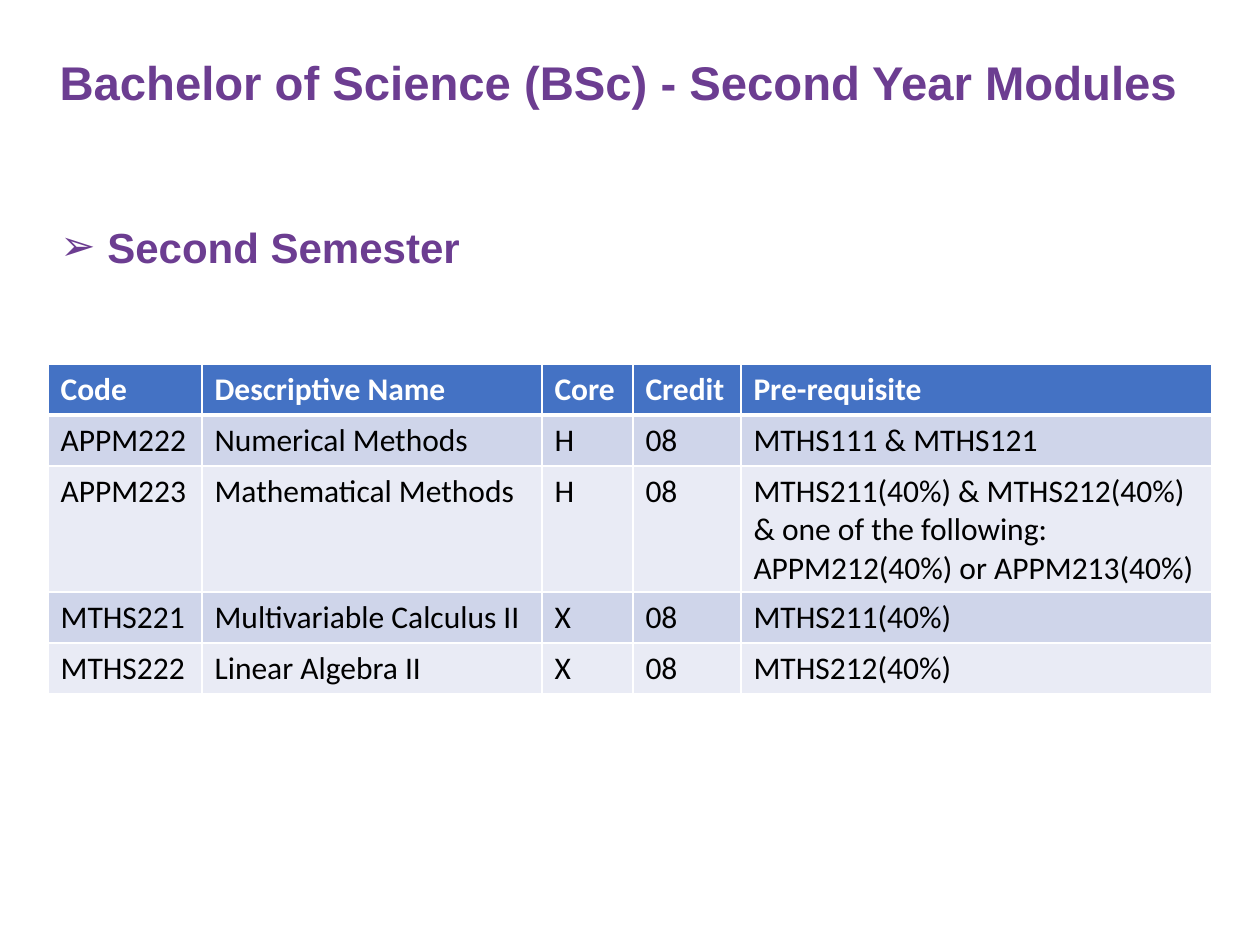
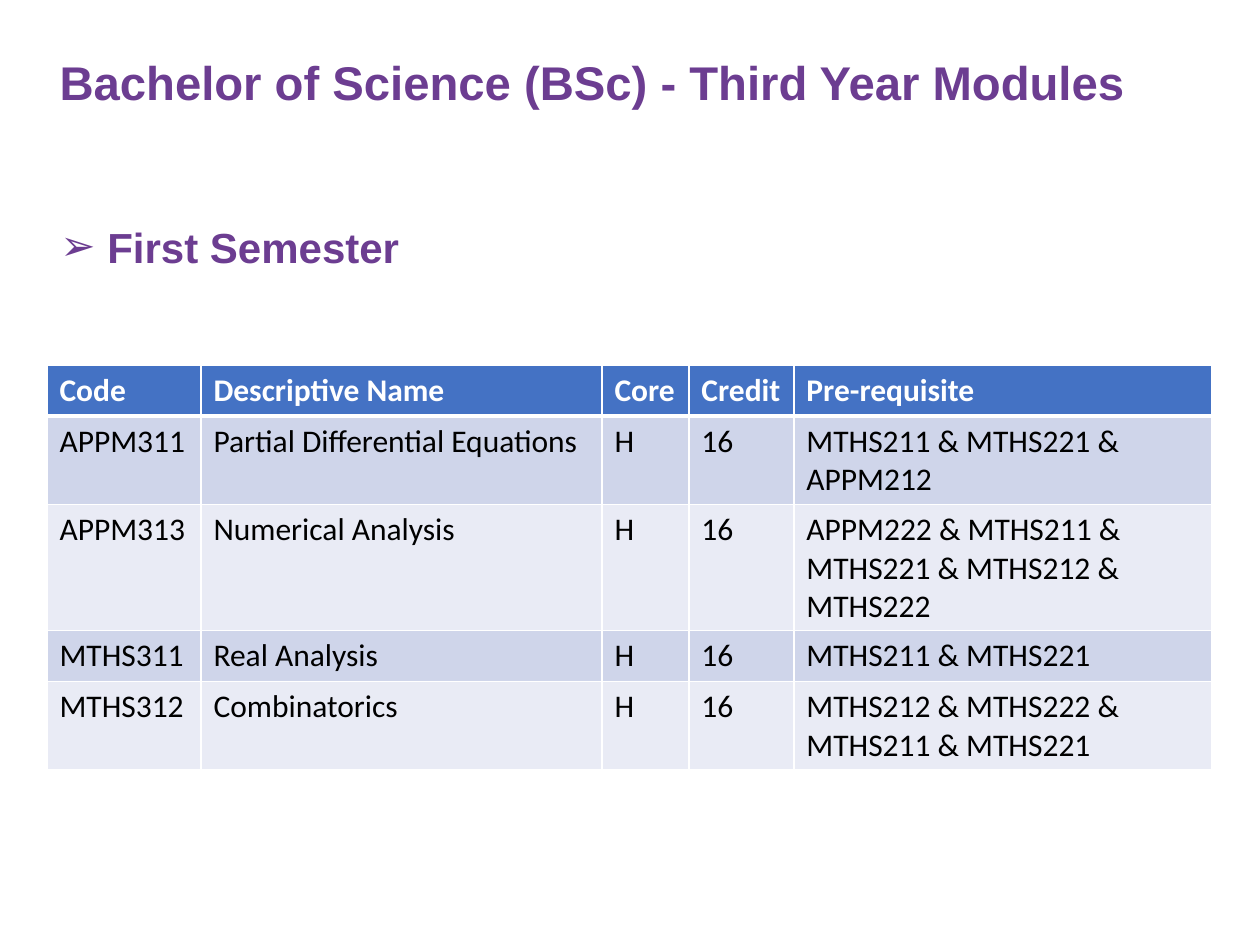
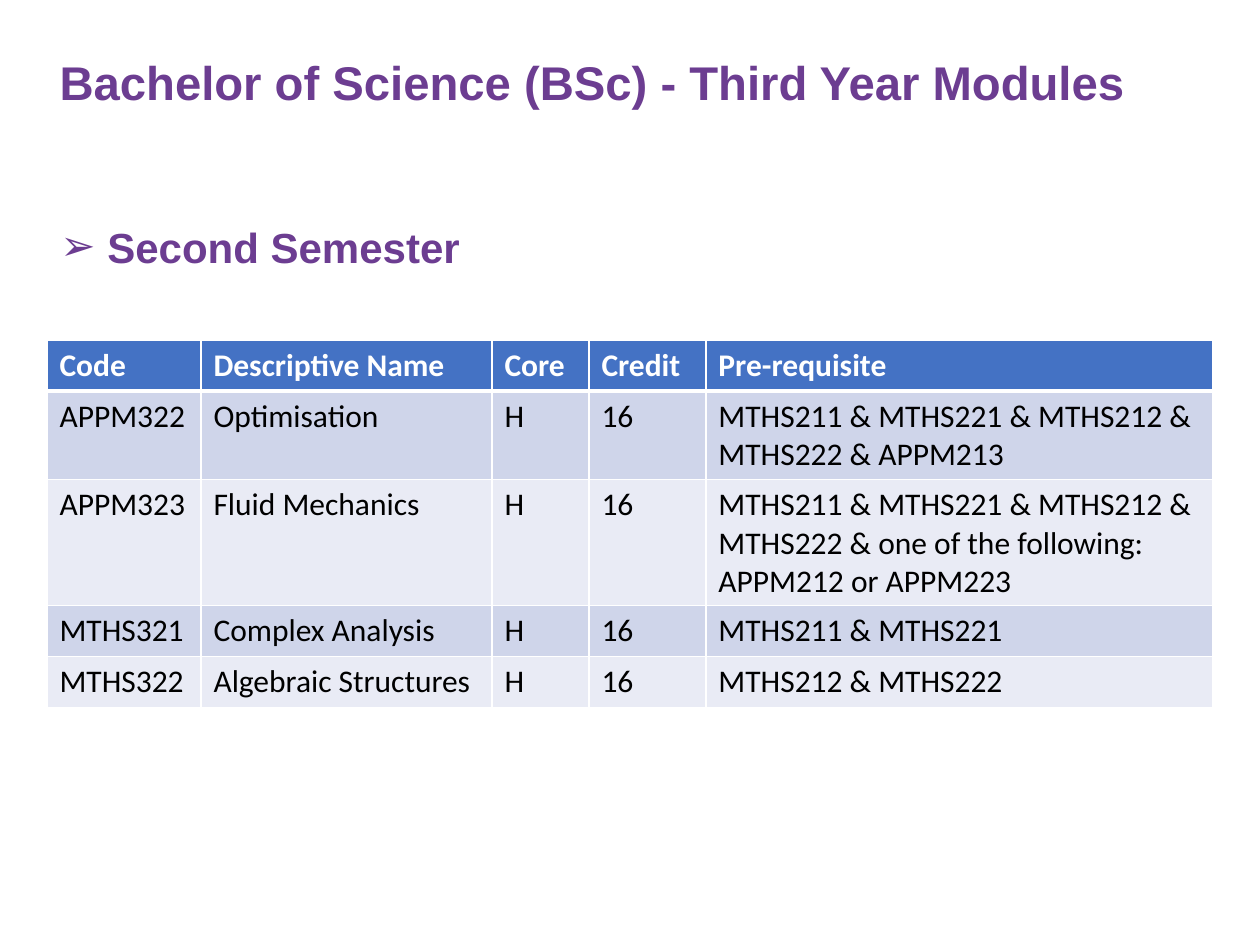
from lxml import etree
from pptx import Presentation
from pptx import util as u
from pptx.dml.color import RGBColor
from pptx.enum import text
from pptx.oxml.ns import qn

PX = 914400 / 126

PURPLE = RGBColor(0x6C, 0x3D, 0x91)
BLUE = RGBColor(0x44, 0x72, 0xC4)
BAND_DARK = RGBColor(0xCF, 0xD5, 0xEA)
BAND_LIGHT = RGBColor(0xE9, 0xEB, 0xF5)
WHITE = RGBColor(0xFF, 0xFF, 0xFF)
BLACK = RGBColor(0, 0, 0)

HEADINGS = ("Code", "Descriptive Name", "Core", "Credit", "Pre-requisite")
ROW_HEIGHT = 51

SEMESTERS = [
    dict(
        year="Second", semester="Second", heading_width=430,
        table_at=(48, 364), columns=(154, 340, 91, 108, 471),
        modules=[
            ("APPM222", "Numerical Methods", "H", "08", "MTHS111 & MTHS121"),
            ("APPM223", "Mathematical Methods", "H", "08",
             "MTHS211(40%) & MTHS212(40%) & one of the following: "
             "APPM212(40%) or APPM213(40%)"),
            ("MTHS221", "Multivariable Calculus II", "X", "08", "MTHS211(40%)"),
            ("MTHS222", "Linear Algebra II", "X", "08", "MTHS212(40%)"),
        ],
    ),
    dict(
        year="Third", semester="First", heading_width=368,
        table_at=(47, 365), columns=(154, 401, 87, 105, 418),
        modules=[
            ("APPM311", "Partial Differential Equations", "H", "16",
             "MTHS211 & MTHS221 & APPM212"),
            ("APPM313", "Numerical Analysis", "H", "16",
             "APPM222 & MTHS211 & MTHS221 & MTHS212 & MTHS222"),
            ("MTHS311", "Real Analysis", "H", "16", "MTHS211 & MTHS221"),
            ("MTHS312", "Combinatorics", "H", "16",
             "MTHS212 & MTHS222 & MTHS211 & MTHS221"),
        ],
    ),
    dict(
        year="Third", semester="Second", heading_width=430,
        table_at=(47, 340), columns=(154, 291, 97, 117, 507),
        modules=[
            ("APPM322", "Optimisation", "H", "16",
             "MTHS211 & MTHS221 & MTHS212 & MTHS222 & APPM213"),
            ("APPM323", "Fluid Mechanics", "H", "16",
             "MTHS211 & MTHS221 & MTHS212 & MTHS222 & one of the following: "
             "APPM212 or APPM223"),
            ("MTHS321", "Complex Analysis", "H", "16", "MTHS211 & MTHS221"),
            ("MTHS322", "Algebraic Structures", "H", "16", "MTHS212 & MTHS222"),
        ],
    ),
]


def px(*lengths):
    return [u.Emu(round(length * PX)) for length in lengths]


def write(frame, words, size=18, font="Calibri", color=BLACK, bold=False,
          spacing=None, bullet=None, indent=0):
    """Fill a text frame with one left-aligned, formatted paragraph."""
    paragraph = frame.paragraphs[0]
    paragraph.alignment = text.PP_ALIGN.LEFT
    if spacing:
        paragraph.line_spacing = spacing
    if bullet:
        properties = paragraph._p.get_or_add_pPr()
        hang = px(indent)[0]
        properties.set("marL", str(hang))
        properties.set("indent", str(-hang))
        etree.SubElement(properties, qn("a:buFont"), typeface="Arial")
        etree.SubElement(properties, qn("a:buChar"), char=bullet)
    run = paragraph.add_run()
    run.text = words
    run.font.size = u.Pt(size)
    run.font.name = font
    run.font.bold = bold
    run.font.color.rgb = color


prs = Presentation()
prs.slide_width, prs.slide_height = px(1260, 945)

for plan in SEMESTERS:
    slide = prs.slides.add_slide(prs.slide_layouts[5])

    title = slide.shapes.title
    title.left, title.top, title.width, title.height = px(47, 50, 1166, 76)
    title.text_frame.vertical_anchor = text.MSO_ANCHOR.TOP
    title.text_frame.margin_top = px(10)[0]
    title.text_frame.auto_size = text.MSO_AUTO_SIZE.NONE
    write(title.text_frame, f"Bachelor of Science (BSc) - {plan['year']} Year Modules",
          size=27, font="Arial", color=PURPLE, bold=True, spacing=0.9)

    heading = slide.shapes.add_textbox(*px(48, 215, plan["heading_width"], 63)).text_frame
    heading.word_wrap = False
    heading.auto_size = text.MSO_AUTO_SIZE.SHAPE_TO_FIT_TEXT
    write(heading, f"{plan['semester']} Semester", size=24, font="Arial",
          color=PURPLE, bold=True, bullet="➢", indent=47)

    rows = [HEADINGS, *plan["modules"]]
    columns = plan["columns"]
    table = slide.shapes.add_table(
        len(rows), len(columns),
        *px(*plan["table_at"], sum(columns), ROW_HEIGHT * len(rows))).table
    for column, width in zip(table.columns, columns):
        column.width = px(width)[0]

    for r, row in enumerate(rows):
        table.rows[r].height = px(ROW_HEIGHT)[0]
        is_header = r == 0
        band = BLUE if is_header else BAND_DARK if r % 2 else BAND_LIGHT
        edges = {"L": 1, "R": 1, "T": 3 if r == 1 else 1, "B": 3 if is_header else 1}
        for c, words in enumerate(row):
            cell = table.cell(r, c)
            write(cell.text_frame, words, bold=is_header,
                  color=WHITE if is_header else BLACK)
            properties = cell._tc.get_or_add_tcPr()
            for edge, points in edges.items():
                line = etree.SubElement(properties, qn(f"a:ln{edge}"), w=str(u.Pt(points)))
                fill = etree.SubElement(line, qn("a:solidFill"))
                etree.SubElement(fill, qn("a:srgbClr"), val=str(WHITE))
            cell.fill.solid()
            cell.fill.fore_color.rgb = band

prs.save("out.pptx")
